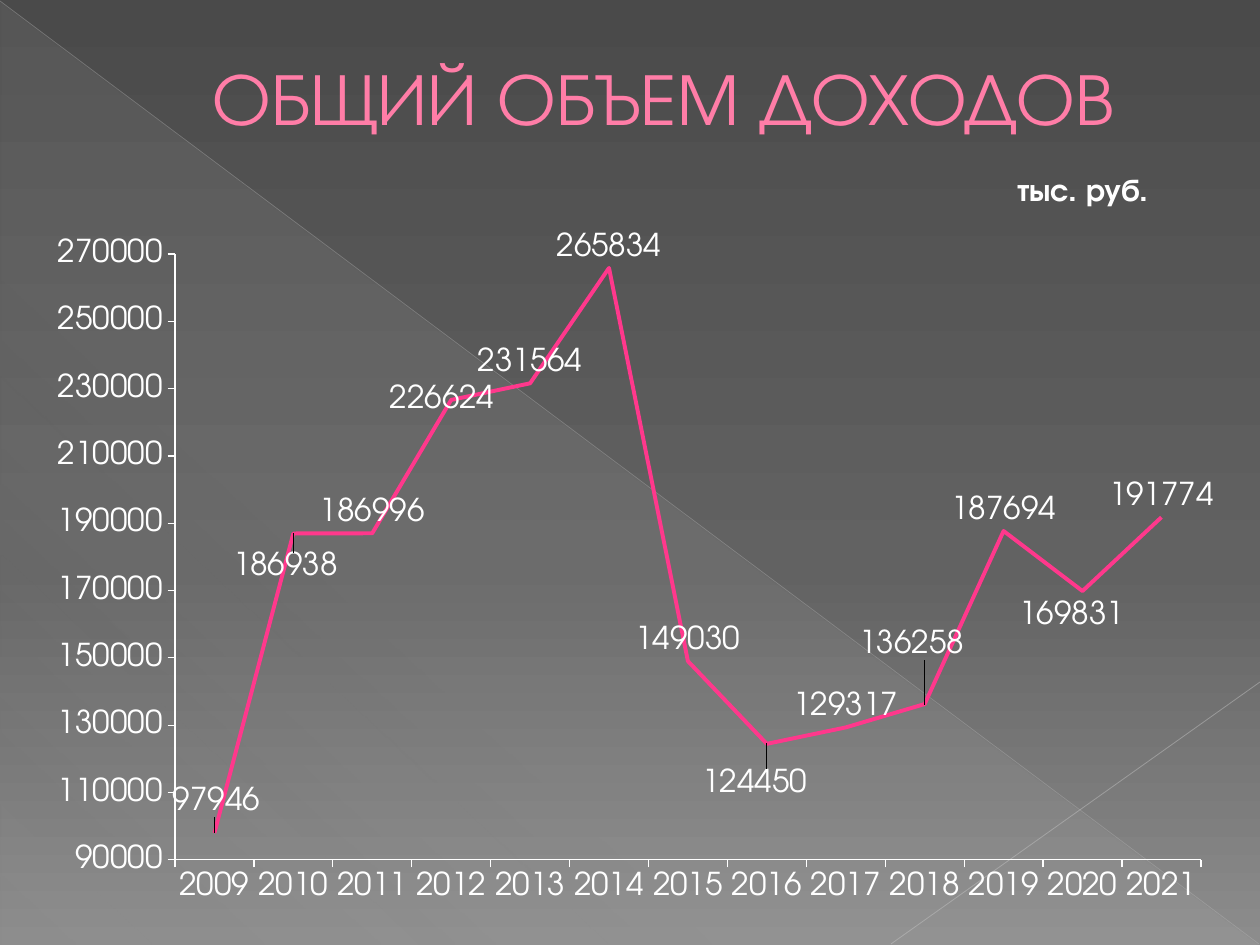
import lxml.etree
import pptx
import pptx.chart.data
import pptx.dml.color
import pptx.enum.chart
import pptx.enum.shapes
import pptx.enum.text
import pptx.oxml
import pptx.oxml.ns
import pptx.util

SCALE = 914400 / 126
FONT = "TeX Gyre Adventor"
COLORS = {
    "top": "4A4A4A", "middle": "626262", "bottom": "8C8C8C",
    "glow": "D2D2D2", "diagonal": "BFBFBF", "corner": "C6C6C6",
    "title": "FF7DA7", "title_edge": "B12761",
    "text": "FFFFFF", "income": "FF388C",
}
INCOME = {
    "2009": 97946, "2010": 186938, "2011": 186996, "2012": 226624,
    "2013": 231564, "2014": 265834, "2015": 149030, "2016": 124450,
    "2017": 129317, "2018": 136258, "2019": 187694, "2020": 169831,
    "2021": 191774,
}
LABEL_SHIFTS = {
    "2009": (2, -11), "2010": (-8, 54), "2012": (-9, 20),
    "2016": (-12, 60), "2018": (-13, -39), "2020": (-11, 45),
}


def px(length):
    """Turn px into EMU."""
    return pptx.util.Emu(round(length * SCALE))


def rgb(name):
    """Return a palette colour."""
    return pptx.dml.color.RGBColor.from_string(COLORS[name])


def set_font(font, size, color, bold=False):
    """Format a font of the slide."""
    font.name, font.size, font.bold = FONT, pptx.util.Pt(size), bold
    font.color.rgb = rgb(color)


def set_gradient(fill, stops, angle):
    """Give a fill linear stops of position, colour name and opacity."""
    fill.gradient()
    gradient = fill._xPr.find(pptx.oxml.ns.qn("a:gradFill"))
    for child in list(gradient):
        gradient.remove(child)
    stop_xml = "".join(
        f'<a:gs pos="{position * 1000}"><a:srgbClr val="{COLORS[name]}">'
        f'<a:alpha val="{opacity * 1000}"/></a:srgbClr></a:gs>'
        for position, name, opacity in stops)
    namespace = pptx.oxml.ns.nsdecls("a")
    gradient.append(pptx.oxml.parse_xml(f"<a:gsLst {namespace}>{stop_xml}</a:gsLst>"))
    gradient.append(pptx.oxml.parse_xml(
        f'<a:lin {namespace} ang="{angle * 60000}" scaled="0"/>'))


def add_ray(slide, start, end, color, width, opacity):
    """Draw a thin translucent line."""
    ray = slide.shapes.add_connector(
        pptx.enum.shapes.MSO_CONNECTOR.STRAIGHT, *map(px, start + end))
    ray.line.color.rgb = rgb(color)
    ray.line.width = pptx.util.Pt(width)
    properties = ray._element.spPr
    hue = properties.find(".//" + pptx.oxml.ns.qn("a:srgbClr"))
    lxml.etree.SubElement(hue, pptx.oxml.ns.qn("a:alpha"), val=str(opacity * 1000))
    lxml.etree.SubElement(properties, pptx.oxml.ns.qn("a:effectLst"))


def add_backdrop(slide, left, top, width, height):
    """Fill the background and draw the triangle with its rays."""
    set_gradient(slide.background.fill,
                 [(0, "top", 100), (60, "middle", 100), (100, "bottom", 100)], 90)
    triangle = slide.shapes.add_shape(
        pptx.enum.shapes.MSO_SHAPE.RIGHT_TRIANGLE,
        px(left + 1), px(top + 2), px(width - 2), px(height - 2))
    triangle.shadow.inherit = False
    triangle.line.fill.background()
    set_gradient(triangle.fill, [(0, "glow", 10), (70, "glow", 8), (100, "glow", 1)], 133)
    right, bottom = left + width, top + height - 1
    add_ray(slide, (left, top + 1), (right - 1, bottom), "diagonal", 0.39, 35)
    add_ray(slide, (right, top + 682), (left + 891, bottom), "corner", 0.47, 45)


def add_title(slide, left, top, width, height):
    """Place the heading in the title placeholder."""
    title = slide.shapes.title
    title.left, title.top, title.width, title.height = map(px, (left, top, width, height))
    frame = title.text_frame
    frame.vertical_anchor = pptx.enum.text.MSO_ANCHOR.MIDDLE
    heading = frame.paragraphs[0]
    heading.alignment = pptx.enum.text.PP_ALIGN.CENTER
    heading._p.get_or_add_pPr().set("marL", str(px(67)))
    run = heading.add_run()
    run.text = "ОБЩИЙ ОБЪЕМ ДОХОДОВ"
    set_font(run.font, 42, "title")
    run._r.get_or_add_rPr().insert(0, pptx.oxml.parse_xml(
        f'<a:ln {pptx.oxml.ns.nsdecls("a")} w="6350"><a:solidFill>'
        f'<a:srgbClr val="{COLORS["title_edge"]}"/></a:solidFill></a:ln>'))


def make_layout(**settings):
    """Build a manual chart layout."""
    entries = "".join(f'<c:{key} val="{value}"/>' for key, value in settings.items())
    return pptx.oxml.parse_xml(
        f'<c:layout {pptx.oxml.ns.nsdecls("c")}><c:manualLayout>{entries}'
        "</c:manualLayout></c:layout>")


def replace_layout(parent, layout, position):
    """Put a layout in place of any earlier one."""
    for earlier in parent.findall(pptx.oxml.ns.qn("c:layout")):
        parent.remove(earlier)
    parent.insert(position, layout)


def format_axis(axis):
    """Give an axis white lines, outside ticks and no grid."""
    axis.has_major_gridlines = False
    axis.major_tick_mark = pptx.enum.chart.XL_TICK_MARK.OUTSIDE
    axis.minor_tick_mark = pptx.enum.chart.XL_TICK_MARK.NONE
    axis.format.line.color.rgb = rgb("text")
    axis.format.line.width = pptx.util.Pt(0.75)
    set_font(axis.tick_labels.font, 18, "text")


def format_series(series, width, height):
    """Format the income line and shift its crowded labels."""
    series.smooth = False
    series.format.line.color.rgb = rgb("income")
    series.format.line.width = pptx.util.Pt(2.25)
    above = pptx.enum.chart.XL_LABEL_POSITION.ABOVE
    series.data_labels.show_value = True
    series.data_labels.position = above
    set_font(series.data_labels.font, 18, "text")
    years = list(INCOME)
    for year, (right, down) in LABEL_SHIFTS.items():
        index = years.index(year)
        label = series.points[index].data_label
        label.position = above
        set_font(label.font, 18, "text")
        shifted = series.data_labels._element.find(
            f'{pptx.oxml.ns.qn("c:dLbl")}[{list(LABEL_SHIFTS).index(year) + 1}]')
        replace_layout(shifted, make_layout(
            x=round(right / width, 4), y=round(down / height, 4)), 1)


def add_income_chart(slide, left, top, width, height):
    """Add the line chart of yearly income."""
    income = pptx.chart.data.CategoryChartData()
    income.categories = list(INCOME)
    income.add_series("Series 1", list(INCOME.values()))
    chart = slide.shapes.add_chart(
        pptx.enum.chart.XL_CHART_TYPE.LINE,
        *map(px, (left, top, width, height)), income).chart
    set_font(chart.font, 18, "text")
    chart.has_legend = False
    chart.plots[0].vary_by_categories = False
    chart.has_title = True
    unit = chart.chart_title.text_frame.paragraphs[0].add_run()
    unit.text = "тыс. руб."
    set_font(unit.font, 18, "text", True)
    replace_layout(chart.chart_title._element,
                   make_layout(xMode="edge", yMode="edge", x=0.82, y=0.03), 1)
    replace_layout(chart._chartSpace.chart.plotArea, make_layout(
        layoutTarget="inner", xMode="edge", yMode="edge",
        x=round(140 / width, 4), y=round(109 / height, 4),
        w=round(1026 / width, 4), h=round(606 / height, 4)), 0)
    format_axis(chart.category_axis)
    format_axis(chart.value_axis)
    chart.value_axis.minimum_scale = 90000
    chart.value_axis.maximum_scale = 270000
    chart.value_axis.major_unit = 20000
    format_series(chart.plots[0].series[0], width, height)


def main():
    """Build and save the income slide."""
    deck = pptx.Presentation()
    deck.slide_width, deck.slide_height = px(1260), px(945)
    slide = deck.slides.add_slide(deck.slide_layouts[5])
    add_backdrop(slide, 0, 0, 1260, 945)
    add_title(slide, 63, 37, 1134, 118)
    add_income_chart(slide, 35, 145, 1191, 774)
    deck.save("out.pptx")


if __name__ == "__main__":
    main()
